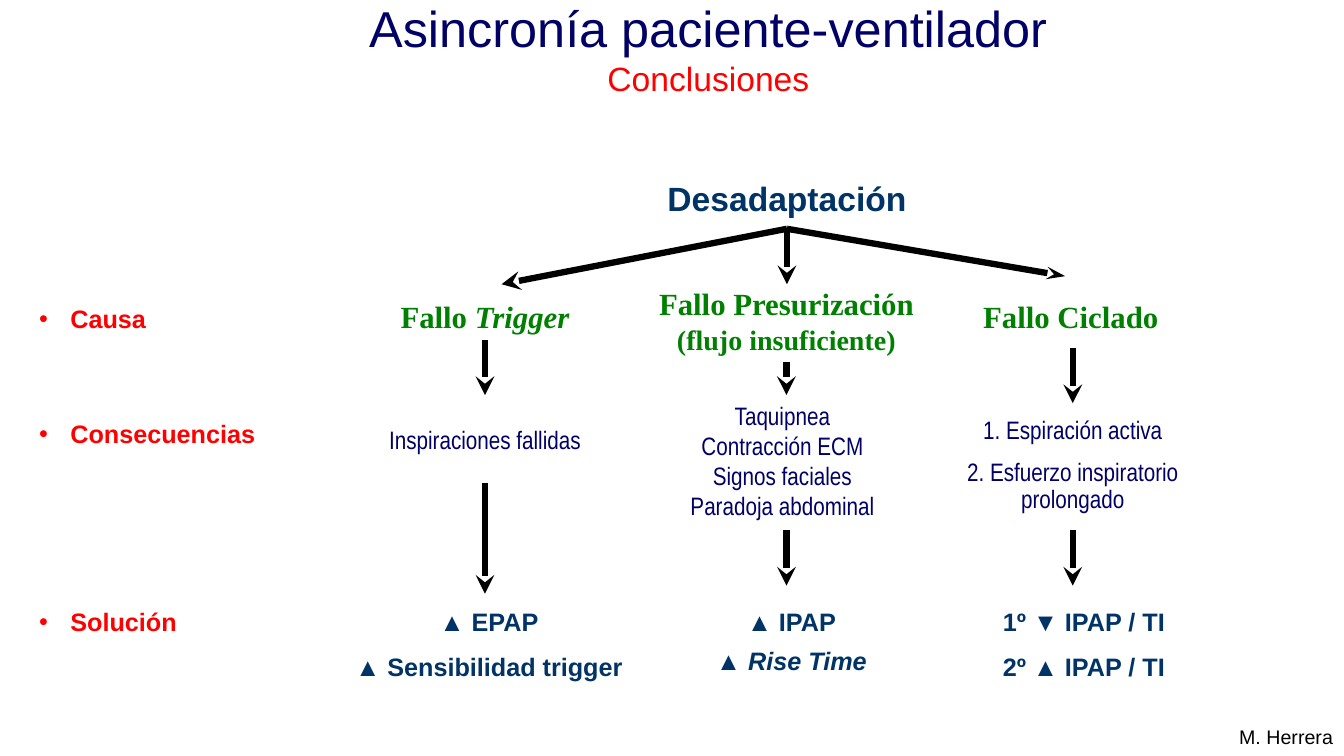
from dataclasses import dataclass
from lxml.etree import SubElement
from pptx import Presentation
from pptx.dml.color import RGBColor
from pptx.enum.shapes import MSO_CONNECTOR
from pptx.enum.text import MSO_ANCHOR, MSO_AUTO_SIZE, PP_ALIGN
from pptx.oxml.ns import qn
from pptx.util import Inches, Pt


@dataclass(frozen=True)
class Style:
    font: str
    size: int
    color: str
    bold: bool = False


@dataclass(frozen=True)
class Theme:
    title = Style("Arial", 36, "000066")
    subtitle = Style("Arial", 24, "FF0000")
    root = Style("Arial", 24, "003366", True)
    cause = Style("Times New Roman", 22, "008000", True)
    effect = Style("Arial Narrow", 18, "000066")
    remedy = Style("Arial", 18, "003366", True)
    label = Style("Arial", 18, "FF0000", True)
    author = Style("Arial", 14, "000000")
    arrow = RGBColor.from_string("000000")
    arrow_width = Pt(4.5)
    cause_note_size = Pt(20)


THEME = Theme()


@dataclass(frozen=True)
class Part:
    """Text block of a column: offsets of its centre and top, and its size."""
    shift: float
    top: float
    width: float
    height: float
    lines: tuple
    gap: float = 0
    spacing: tuple = ()


@dataclass(frozen=True)
class Column:
    axis: float
    cause: Part
    effect: Part
    remedy: Part
    arrows: tuple
    joined: bool = True


FLOW_TOP = 2.78
# A line is a string, or a list of runs; "*" marks an italic run.
COLUMNS = (
    Column(4.81,
           Part(0, 0.12, 2.2, 0.47, (("Fallo ", "*Trigger"),)),
           Part(0, 1.38, 2.68, 0.4, ("Inspiraciones fallidas",)),
           Part(0.04, 3.19, 2.99, 0.85, ("▲ EPAP", "▲ Sensibilidad trigger"), 10),
           ((0.59, 1.14), (2.01, 3.11))),
    Column(7.8,
           Part(0, 0, 2.79, 0.81, (("Fallo Presurización", "\n", "(flujo insuficiente)"),)),
           Part(-0.04, 1.14, 2.28, 1.3,
                ("Taquipnea", "Contracción ECM", "Signos faciales", "Paradoja abdominal")),
           Part(0.05, 3.19, 2.68, 0.81, ("▲ IPAP", ("▲ ", "*Rise Time")), 10, (1, 0.8)),
           ((0.81, 1.14), (2.48, 3.03))),
    Column(10.64,
           Part(-0.02, 0.12, 2.24, 0.47, ("Fallo Ciclado",)),
           Part(0, 1.32, 2.48, 1.07,
                ("1. Espiración activa", "2. Esfuerzo inspiratorio prolongado"), 10, (0.9, 0.9)),
           Part(0.11, 3.19, 2.54, 0.86, ("1º ▼ IPAP / TI", "2º ▲ IPAP / TI"), 10),
           ((0.67, 1.22), (2.48, 3.03)), joined=False),
)
ROW_LABELS = (("Causa", 2.96), ("Consecuencias", 4.1), ("Solución", 5.97))


def apply_style(paragraph, style, align=PP_ALIGN.CENTER):
    paragraph.alignment = align
    font = paragraph.font
    font.name, font.size, font.bold = style.font, Pt(style.size), style.bold
    font.color.rgb = RGBColor.from_string(style.color)


def write_line(paragraph, line):
    runs = (line,) if isinstance(line, str) else line
    for text in runs:
        if text == "\n":
            paragraph.add_line_break()
            continue
        run = paragraph.add_run()
        run.text = text.lstrip("*")
        if text.startswith("*"):
            run.font.italic = True
        if text.startswith("("):
            run.font.size = THEME.cause_note_size


def add_text(slide, box, lines, style, gap=0, spacing=(), align=PP_ALIGN.CENTER):
    shape = slide.shapes.add_textbox(*map(Inches, box))
    frame = shape.text_frame
    frame.word_wrap = True
    for index, line in enumerate(lines):
        paragraph = frame.add_paragraph() if index else frame.paragraphs[0]
        write_line(paragraph, line)
        if index and gap:
            paragraph.space_before = Pt(gap)
        if spacing:
            paragraph.line_spacing = spacing[index]
        apply_style(paragraph, style, align)
    return shape


def add_arrow(slide, start, end, head_width="med"):
    arrow = slide.shapes.add_connector(
        MSO_CONNECTOR.STRAIGHT, *map(Inches, (*start, *end)))
    arrow.line.color.rgb = THEME.arrow
    arrow.line.width = THEME.arrow_width
    properties = arrow._element.spPr
    SubElement(properties.find(qn("a:ln")), qn("a:tailEnd"), type="stealth", w=head_width)
    SubElement(properties, qn("a:effectLst"))
    return arrow


def add_heading(slide, box):
    title = slide.shapes.title
    title.left, title.top, title.width, title.height = map(Inches, box)
    frame = title.text_frame
    frame.auto_size = MSO_AUTO_SIZE.NONE
    frame.vertical_anchor = MSO_ANCHOR.MIDDLE
    frame.text = "Asincronía paciente-ventilador\nConclusiones"
    for paragraph, style in zip(frame.paragraphs, (THEME.title, THEME.subtitle)):
        apply_style(paragraph, style)


def add_root(slide, box):
    """Draw the top node and the arrows that fan out to the columns."""
    left, top, width, _ = box
    add_text(slide, box, ("Desadaptación",), THEME.root)
    start = (left + width / 2, top + 0.55)
    for shift, drop, head_width in ((0, 0.55, "med"), (-2.83, 0.55, "med"), (2.76, 0.47, "sm")):
        add_arrow(slide, start, (start[0] + shift, start[1] + drop), head_width)


def add_column(slide, column, top):
    def place(part, style):
        box = (column.axis + part.shift - part.width / 2, top + part.top,
               part.width, part.height)
        return add_text(slide, box, part.lines, style, part.gap, part.spacing)

    cause = place(column.cause, THEME.cause)
    place(column.effect, THEME.effect)
    place(column.remedy, THEME.remedy)
    to_effect, _ = [add_arrow(slide, (column.axis, top + start), (column.axis, top + end))
                    for start, end in column.arrows]
    if column.joined:
        to_effect.begin_connect(cause, 2)


def add_row_label(slide, box, text):
    shape = add_text(slide, box, (), THEME.label)
    paragraph = shape.text_frame.paragraphs[0]
    write_line(paragraph, text)
    properties = paragraph._p.get_or_add_pPr()
    properties.set("marL", str(Inches(0.31)))
    properties.set("indent", str(Inches(-0.31)))
    SubElement(properties, qn("a:buFont"), typeface="Arial")
    SubElement(properties, qn("a:buChar"), char="•")
    apply_style(paragraph, THEME.label, PP_ALIGN.LEFT)


def add_author(slide, box):
    shape = add_text(slide, box, ("M. Herrera",), THEME.author, align=PP_ALIGN.RIGHT)
    shape.text_frame.vertical_anchor = MSO_ANCHOR.MIDDLE


def main():
    presentation = Presentation()
    presentation.slide_width, presentation.slide_height = Inches(13.33), Inches(7.5)
    slide = presentation.slides.add_slide(presentation.slide_layouts[5])
    add_heading(slide, (2.75, -0.11, 8.55, 1.17))
    add_root(slide, (6.15, 1.72, 3.31, 0.5))
    for column in COLUMNS:
        add_column(slide, column, FLOW_TOP)
    for text, top in ROW_LABELS:
        add_row_label(slide, (0.29, top, 2.36, 0.4), text)
    add_author(slide, (10.33, 7.11, 2.99, 0.39))
    presentation.save("out.pptx")


if __name__ == "__main__":
    main()
